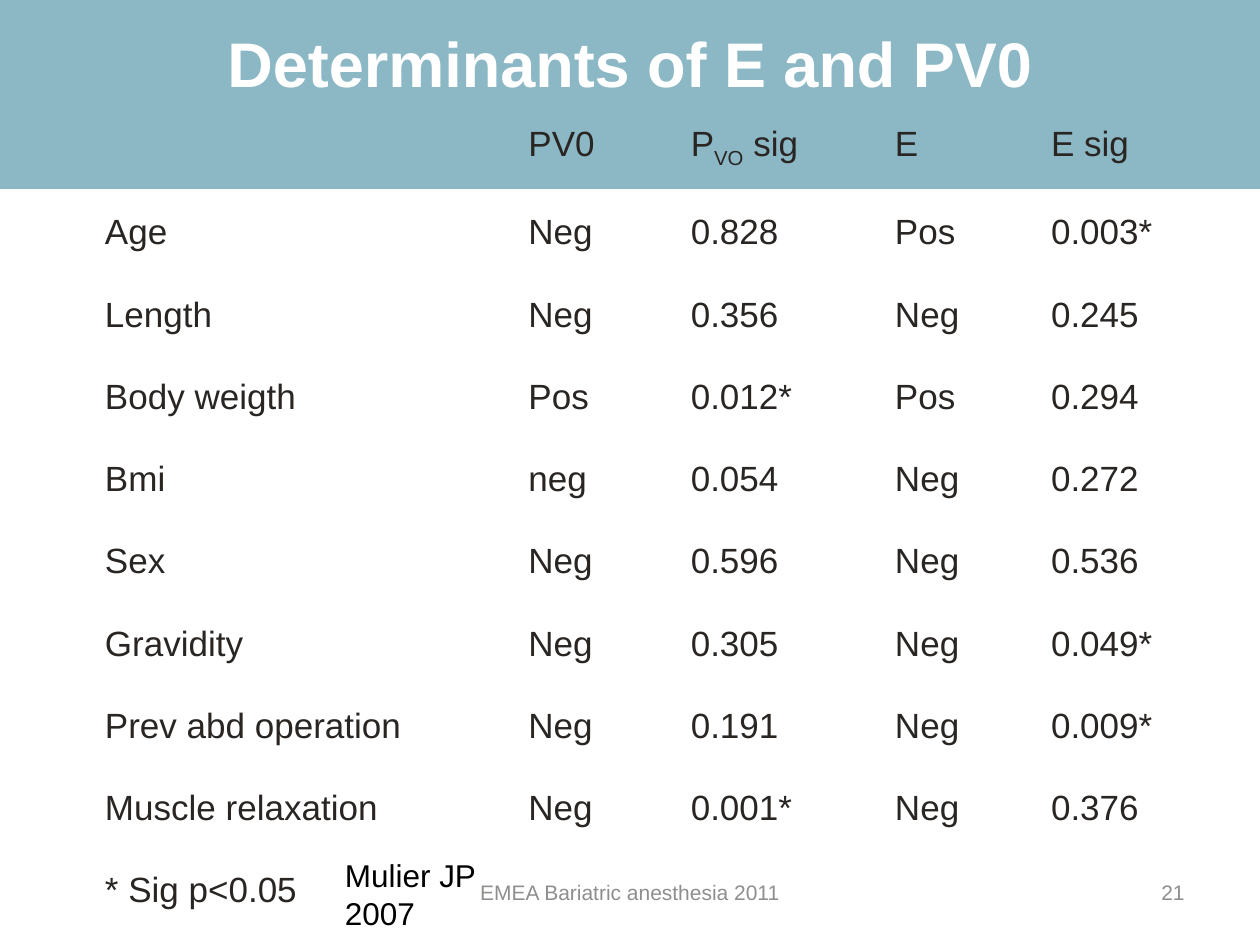
from pptx import Presentation
from pptx.dml.color import RGBColor
from pptx.enum.shapes import MSO_SHAPE
from pptx.enum.text import MSO_ANCHOR, PP_ALIGN
from pptx.util import Pt

RECTANGLE = MSO_SHAPE.RECTANGLE
TOP, MIDDLE = MSO_ANCHOR.TOP, MSO_ANCHOR.MIDDLE
LEFT, CENTER, RIGHT = PP_ALIGN.LEFT, PP_ALIGN.CENTER, PP_ALIGN.RIGHT

TITLE_ONLY = 5
PLAIN_TABLE_STYLE = "{2D5ABB26-0587-4C30-8999-92F81FD0307C}"
BAND, WHITE, BLACK = "8CB8C6", "FFFFFF", "000000"
TABLE_INK, FOOTER_INK = "292523", "8E8E8D"

COLUMN_WIDTHS = [242, 92.8, 116.7, 89.2, 107.3]
HEADER_HEIGHT, ROW_HEIGHT = 48.5, 45.5
SUBSCRIPT_HEADING = ["P", "VO", " sig"]
ROWS = [
    ["", "PV0", SUBSCRIPT_HEADING, "E", "E sig"],
    ["Age", "Neg", "0.828", "Pos", "0.003*"],
    ["Length", "Neg", "0.356", "Neg", "0.245"],
    ["Body weigth", "Pos", "0.012*", "Pos", "0.294"],
    ["Bmi", "neg", "0.054", "Neg", "0.272"],
    ["Sex", "Neg", "0.596", "Neg", "0.536"],
    ["Gravidity", "Neg", "0.305", "Neg", "0.049*"],
    ["Prev abd operation", "Neg", "0.191", "Neg", "0.009*"],
    ["Muscle relaxation", "Neg", "0.001*", "Neg", "0.376"],
    ["* Sig p<0.05", "", "", "", ""],
]


def color(hex_value):
    return RGBColor.from_string(hex_value)


def format_paragraph(paragraph, size, ink, align=LEFT, bold=False):
    paragraph.alignment = align
    font = paragraph.font
    font.name, font.size, font.bold = "Arial", Pt(size), bold
    font.color.rgb = color(ink)


def add_band(slide):
    band = slide.shapes.add_shape(RECTANGLE, 0, 0, Pt(720), Pt(108))
    band.shadow.inherit = False
    band.fill.solid()
    band.fill.fore_color.rgb = color(BAND)
    band.line.fill.background()
    slide.shapes._spTree.insert(2, band._element)


def set_title(slide, text):
    title = slide.shapes.title
    title.left, title.top, title.width, title.height = Pt(36), Pt(0), Pt(648), Pt(77)
    title.text_frame.text = text
    title.text_frame.vertical_anchor = MIDDLE
    heading = title.text_frame.paragraphs[0]
    heading.line_spacing = 0.9
    format_paragraph(heading, 36, WHITE, CENTER, True)


def add_label(slide, text, box, size, ink, align=LEFT, anchor=MIDDLE):
    frame = slide.shapes.add_textbox(*map(Pt, box)).text_frame
    frame.word_wrap = True
    frame.vertical_anchor = anchor
    frame.text = text
    format_paragraph(frame.paragraphs[0], size, ink, align)


def fill_cell(cell, content):
    cell.fill.background()
    cell.margin_left = cell.margin_right = Pt(23)
    cell.margin_top = cell.margin_bottom = Pt(11.5)
    paragraph = cell.text_frame.paragraphs[0]
    format_paragraph(paragraph, 20, TABLE_INK)
    if content is SUBSCRIPT_HEADING:
        for part in content:
            paragraph.add_run().text = part
        paragraph.runs[1]._r.get_or_add_rPr().set("baseline", "-25000")
    elif content:
        paragraph.add_run().text = content


def add_determinants_table(slide):
    heights = [HEADER_HEIGHT] + [ROW_HEIGHT] * (len(ROWS) - 1)
    table = slide.shapes.add_table(
        len(ROWS), len(COLUMN_WIDTHS), Pt(37), Pt(60),
        Pt(sum(COLUMN_WIDTHS)), Pt(sum(heights))).table
    table.first_row = table.horz_banding = False
    table._tbl.tblPr[0].text = PLAIN_TABLE_STYLE
    for column, width in zip(table.columns, COLUMN_WIDTHS):
        column.width = Pt(width)
    for row, height, contents in zip(table.rows, heights, ROWS):
        row.height = Pt(height)
        for cell, content in zip(row.cells, contents):
            fill_cell(cell, content)


def main():
    deck = Presentation()
    deck.slide_width, deck.slide_height = Pt(720), Pt(540)
    slide = deck.slides.add_slide(deck.slide_layouts[TITLE_ONLY])
    add_band(slide)
    set_title(slide, "Determinants of E and PV0")
    add_label(slide, "21", (516, 492, 168, 36), 12, FOOTER_INK, RIGHT)
    add_determinants_table(slide)
    add_label(slide, "Mulier JP 2007", (190, 485.5, 119.5, 29), 18, BLACK, anchor=TOP)
    add_label(slide, "EMEA Bariatric anesthesia 2011", (246, 492, 228, 36),
              12, FOOTER_INK, CENTER)
    deck.save("out.pptx")


if __name__ == "__main__":
    main()
